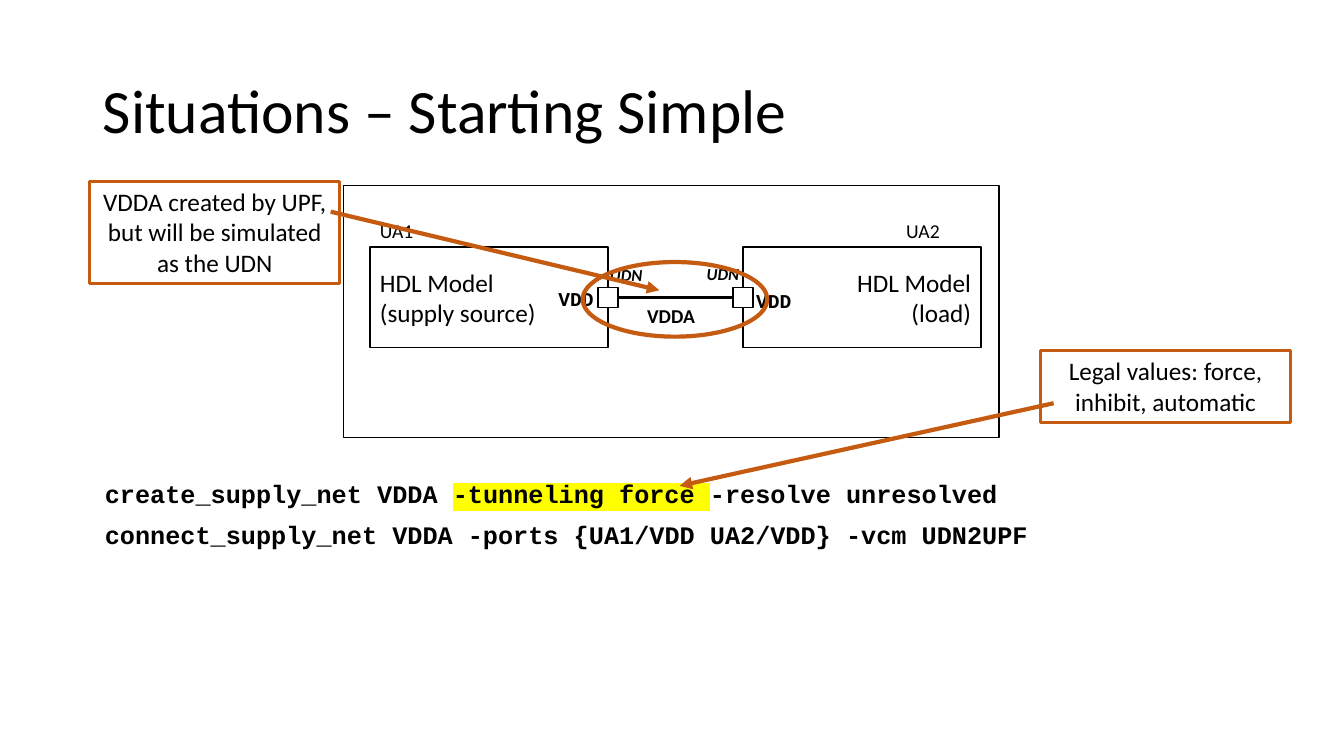
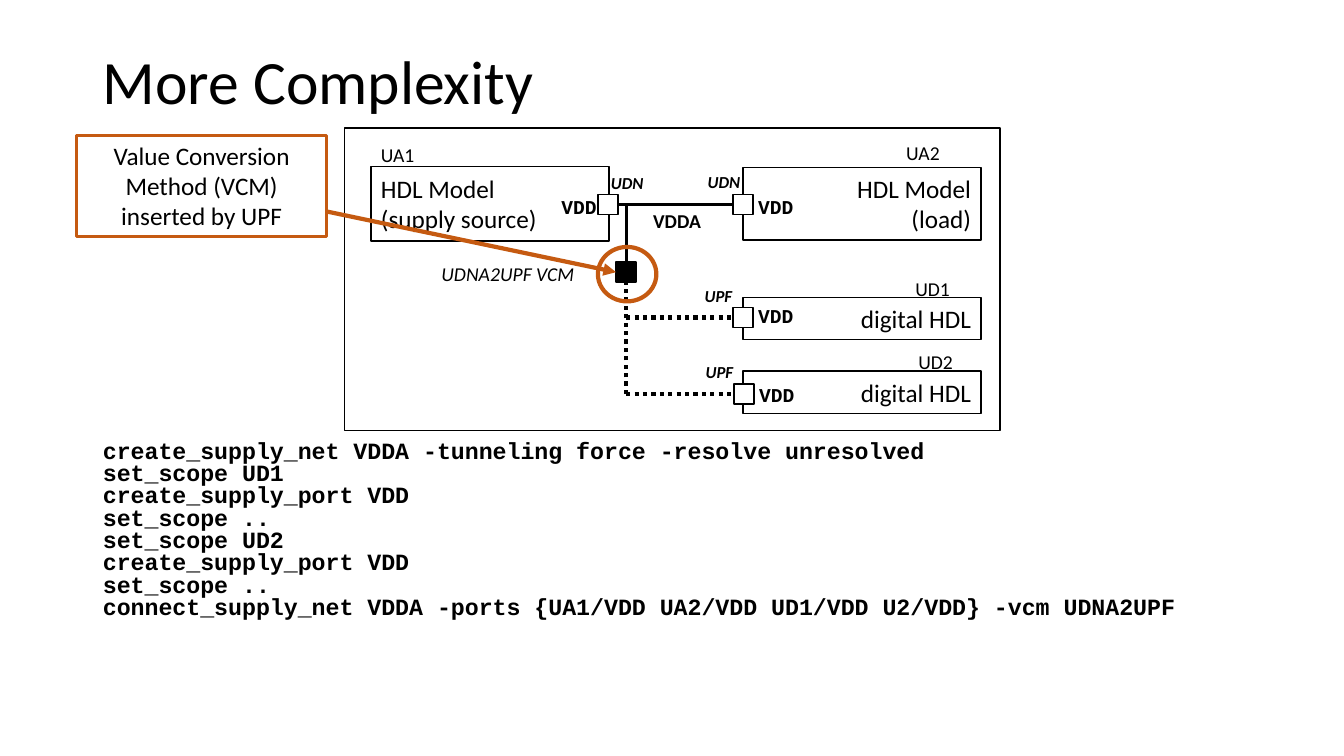
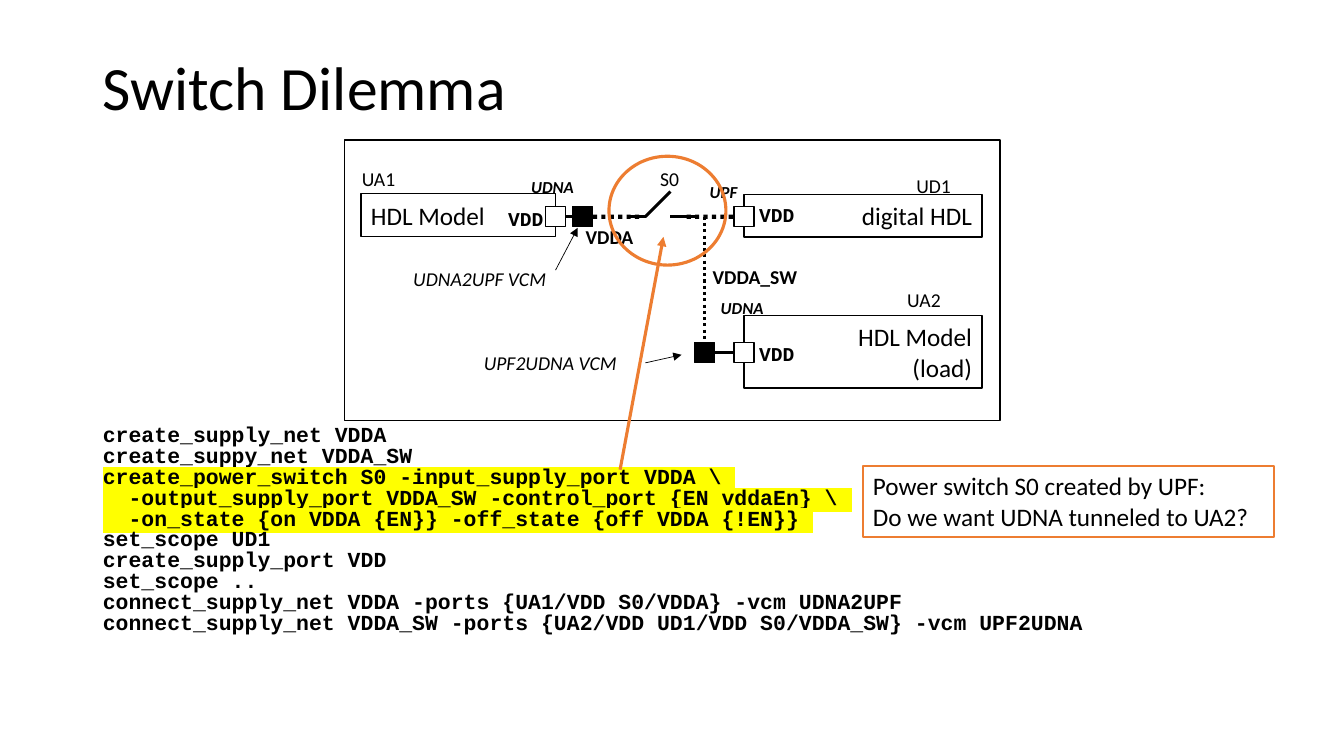
from lxml.etree import SubElement as Sub
from pptx import Presentation
from pptx.dml.color import RGBColor
from pptx.enum.dml import MSO_LINE_DASH_STYLE as Dash
from pptx.enum.shapes import MSO_CONNECTOR as Link, MSO_SHAPE as Kind
from pptx.enum.text import MSO_ANCHOR as Anchor, MSO_AUTO_SIZE as Fit, PP_ALIGN as Align
from pptx.oxml.ns import qn
from pptx.util import Inches, Pt

BLACK, WHITE, RUST, AMBER, MARK = "000000", "FFFFFF", "C55A11", "ED7D31", "FFFF00"
SANS, MONO = "Calibri", "Courier New"
TOP, LEFT, BASE, RIGHT = range(4)
TAGS = {
    "type": (0.79, 0.3, dict(size=12, bold=True, ital=True)),
    "name": (0.84, 0.34, dict(size=14)),
    "net": (1.23, 0.34, dict(size=14, bold=True)),
    "pin": (0.59, 0.34, dict(size=14, bold=True, face=MONO)),
    "vcm": (1.93, 0.34, dict(size=14, ital=True)),
}


def ink(code):
    """Turn a hex string into a colour."""
    return RGBColor.from_string(code)


def place(shape, *area):
    """Move and size a shape, in inches."""
    shape.left, shape.top, shape.width, shape.height = map(Inches, area)


def style(para, size, bold=False, ital=False, face=SANS, align=Align.LEFT):
    """Format a whole paragraph."""
    para.alignment = align
    font = para.font
    font.size, font.bold, font.italic, font.name = Pt(size), bold, ital, face
    font.color.rgb = ink(BLACK)


def write(frame, text, **look):
    """Fill a text frame with evenly styled paragraphs."""
    frame.word_wrap = True
    frame.text = text
    for para in frame.paragraphs:
        style(para, **look)


class Deck:
    """Hold the shared style and the current slide."""

    def __init__(self):
        """Start an empty wide deck."""
        self.deck = Presentation()
        self.deck.slide_width, self.deck.slide_height = Inches(13.33), Inches(7.5)

    def page(self, title, height):
        """Add a slide with its title."""
        self.slide = self.deck.slides.add_slide(self.deck.slide_layouts[1])
        self.shapes = self.slide.shapes
        head = self.shapes.title
        place(head, 0.92, 0.4, 11.5, height)
        frame = head.text_frame
        write(frame, title, size=44)
        frame.auto_size, frame.vertical_anchor = Fit.NONE, Anchor.MIDDLE
        frame.paragraphs[0].line_spacing = 0.9

    def code(self, area, lines, size, pitch, gap=0):
        """Fill the body with code; odd parts of a tuple are highlighted."""
        body = self.slide.placeholders[1]
        place(body, *area)
        frame = body.text_frame
        frame.auto_size, frame.vertical_anchor = Fit.NONE, Anchor.TOP
        for row, line in enumerate(lines):
            para = frame.add_paragraph() if row else frame.paragraphs[0]
            props = para._p.get_or_add_pPr()
            props.set("marL", "0")
            props.set("indent", "0")
            Sub(props, qn("a:buNone"))
            para.line_spacing = pitch
            para.space_before = Pt(gap if row else 0)
            style(para, size, bold=True, face=MONO)
            for spot, part in enumerate((line,) if isinstance(line, str) else line):
                if part:
                    run = para.add_run()
                    run.text = part
                    if spot % 2:
                        glow = Sub(run._r.get_or_add_rPr(), qn("a:highlight"))
                        Sub(glow, qn("a:srgbClr"), val=MARK)

    def shape(self, area, kind=Kind.RECTANGLE, fill=None, line=BLACK, width=1):
        """Draw an outlined preset shape."""
        shape = self.shapes.add_shape(kind, *map(Inches, area))
        shape.shadow.inherit = False
        if fill:
            shape.fill.solid()
            shape.fill.fore_color.rgb = ink(fill)
        else:
            shape.fill.background()
        shape.line.color.rgb, shape.line.width = ink(line), Pt(width)
        return shape

    def block(self, area, text, align=Align.RIGHT):
        """Draw a model block."""
        frame = self.shape(area).text_frame
        write(frame, text, size=18, align=align)
        frame.vertical_anchor = Anchor.MIDDLE

    def ring(self, area, line=RUST, width=3):
        """Circle a detail."""
        self.shape(area, Kind.OVAL, line=line, width=width)

    def note(self, area, text, line=RUST, width=2.25, align=Align.CENTER):
        """Draw a framed callout."""
        frame = self.shape(area, line=line, width=width).text_frame
        write(frame, text, size=18, align=align)
        frame.vertical_anchor, frame.auto_size = Anchor.TOP, Fit.SHAPE_TO_FIT_TEXT

    def tag(self, kind, *items):
        """Write small labels of one kind."""
        wide, high, look = TAGS[kind]
        for text, x, y in items:
            box = self.shapes.add_textbox(*map(Inches, (x, y, wide, high)))
            write(box.text_frame, text, **look)
            box.text_frame.auto_size = Fit.SHAPE_TO_FIT_TEXT

    def port(self, x, y, dx=0.15, dy=-0.06):
        """Draw a port and its pin label."""
        self.tag("pin", ("VDD", x + dx, y + dy))
        return self.shape((x, y, 0.2, 0.2), fill=WHITE)

    def cell(self, x, y):
        """Draw a black converter square."""
        return self.shape((x, y, 0.2, 0.2), fill=BLACK)

    def wire(self, start, end, width=2.25, line=BLACK, dots=False, tip=False):
        """Draw a line between points or (shape, side) pairs."""
        ends = [hasattr(spot[0], "shape_id") for spot in (start, end)]
        spots = [(0, 0) if tied else spot for spot, tied in zip((start, end), ends)]
        link = self.shapes.add_connector(Link.STRAIGHT, *(Inches(n) for spot in spots for n in spot))
        if ends[0]:
            link.begin_connect(*start)
        if ends[1]:
            link.end_connect(*end)
        link.line.color.rgb, link.line.width = ink(line), Pt(width)
        if dots:
            link.line.dash_style = Dash.ROUND_DOT
        if tip:
            Sub(link.line._get_or_add_ln(), qn("a:tailEnd"), type="triangle")
        Sub(link._element.spPr, qn("a:effectLst"))


def simple(deck):
    """Build the simple case."""
    deck.page("Situations – Starting Simple", 1.45)
    deck.code((0.94, 4.73, 11.5, 0.86), [
        ("create_supply_net VDDA ", "-tunneling force ", "-resolve unresolved"),
        "connect_supply_net VDDA -ports {UA1/VDD UA2/VDD} -vcm UDN2UPF",
    ], 18, 0.9, 10)
    deck.shape((3.41, 1.84, 6.5, 2.5))
    deck.block((3.67, 2.45, 2.36, 1), "HDL Model\n(supply source)", Align.LEFT)
    deck.block((7.37, 2.45, 2.36, 1), "HDL Model\n(load)")
    feed = deck.port(5.93, 2.85, -0.49, -0.05)
    load = deck.port(7.27, 2.85, 0.13, -0.03)
    deck.wire((feed, RIGHT), (load, LEFT))
    deck.tag("type", ("UDN", 5.95, 2.58), ("UDN", 6.91, 2.57))
    deck.tag("name", ("UA1", 3.67, 2.12), ("UA2", 8.89, 2.12))
    deck.tag("net", ("VDDA", 6.32, 2.97))
    deck.ring((5.78, 2.6, 1.83, 0.74))
    deck.wire((3.28, 2.1), (6.54, 2.88), 3, RUST, tip=True)
    deck.note((0.89, 1.8, 2.48, 1.01), "VDDA created by UPF, but will be simulated as the UDN")
    deck.note((10.32, 3.48, 2.48, 0.71), "Legal values: force, inhibit, automatic")
    deck.wire((10.45, 4), (6.74, 4.82), 3, RUST, tip=True)


def complex_net(deck):
    """Build the case with digital loads."""
    deck.page("More Complexity", 0.87)
    scopes = [line for unit in ("UD1", "UD2")
              for line in (f"set_scope {unit}", "create_supply_port VDD", "set_scope ..")]
    deck.code((0.92, 4.33, 11.5, 1.94), [
        "create_supply_net VDDA -tunneling force -resolve unresolved",
        *scopes,
        "connect_supply_net VDDA -ports {UA1/VDD UA2/VDD UD1/VDD U2/VDD} -vcm UDNA2UPF",
    ], 16.6, 0.8)
    deck.shape((3.42, 1.27, 6.5, 3))
    deck.block((3.68, 1.65, 2.36, 0.74), "HDL Model\n(supply source)", Align.LEFT)
    deck.block((7.37, 1.66, 2.36, 0.72), "HDL Model\n(load)")
    for y in (2.95, 3.68):
        deck.block((7.37, y, 2.36, 0.42), "digital HDL")
    feed = deck.port(5.93, 1.93, -0.46, -0.05)
    load = deck.port(7.27, 1.93, dy=-0.05)
    deck.wire((feed, RIGHT), (load, LEFT))
    cell = deck.cell(6.11, 2.6)
    deck.wire((6.21, 2.03), (cell, TOP))
    deck.wire((6.21, 3.91), (cell, BASE), 3, dots=True)
    for x, y, dy in ((7.27, 3.05, -0.08), (7.28, 3.81, -0.06)):
        deck.wire((6.21, y + 0.1), (deck.port(x, y, dy=dy), LEFT), 3, dots=True)
    deck.tag("type", ("UDN", 5.96, 1.66), ("UDN", 6.92, 1.65), ("UPF", 6.89, 2.79), ("UPF", 6.9, 3.54))
    deck.tag("name", ("UA1", 3.68, 1.37), ("UA2", 8.89, 1.35), ("UD1", 8.98, 2.7), ("UD2", 9.01, 3.42))
    deck.tag("net", ("VDDA", 6.38, 2.02))
    deck.tag("vcm", ("UDNA2UPF VCM", 4.28, 2.55))
    deck.ring((5.93, 2.45, 0.58, 0.54))
    deck.wire((3.25, 2.1), (cell, LEFT), 3, RUST, tip=True)
    deck.note((0.76, 1.34, 2.48, 1.01), "Value Conversion Method (VCM) inserted by UPF")


def switch(deck):
    """Build the power switch case."""
    deck.page("Switch Dilemma", 0.99)
    deck.code((0.92, 4.2, 11.5, 2.13), [
        "create_supply_net VDDA",
        "create_suppy_net VDDA_SW",
        ("", "create_power_switch S0 -input_supply_port VDDA \\ "),
        ("", "  -output_supply_port VDDA_SW -control_port {EN vddaEn} \\ "),
        ("", "  -on_state {on VDDA {EN}} -off_state {off VDDA {!EN}} "),
        "set_scope UD1",
        "create_supply_port VDD",
        "set_scope ..",
        "connect_supply_net VDDA -ports {UA1/VDD S0/VDDA} -vcm UDNA2UPF",
        "connect_supply_net VDDA_SW -ports {UA2/VDD UD1/VDD S0/VDDA_SW} -vcm UPF2UDNA",
    ], 15.3, 0.7, 2)
    deck.shape((3.42, 1.39, 6.5, 2.78))
    deck.block((3.58, 1.92, 1.93, 0.43), "HDL Model", Align.LEFT)
    deck.block((7.38, 1.93, 2.36, 0.42), "digital HDL")
    deck.block((7.38, 3.13, 2.36, 0.72), "HDL Model\n(load)")
    feed = deck.port(5.41, 2.05, -0.47, -0.05)
    gate = deck.port(7.28, 2.05, dy=-0.09)
    load = deck.port(7.28, 3.4)
    first, last = deck.cell(5.68, 2.05), deck.cell(6.89, 3.4)
    deck.wire((feed, RIGHT), (first, LEFT))
    deck.wire((first, RIGHT), (6.37, 2.15), 3, dots=True)
    deck.wire((6.81, 2.15), (gate, LEFT), 3, dots=True)
    deck.wire((6.99, 2.15), (last, TOP), dots=True)
    deck.wire((last, RIGHT), (load, LEFT))
    for start, end in (((6.22, 2.15), (6.41, 2.15)), ((6.4, 2.15), (6.65, 1.9)), ((6.65, 2.15), (6.89, 2.15))):
        deck.wire(start, end)
    for start, end in (((5.51, 2.68), (5.73, 2.26)), ((6.4, 3.6), (6.76, 3.52))):
        deck.wire(start, end, 0.5, tip=True)
    deck.tag("type", ("UDNA", 5.17, 1.7), ("UDNA", 7.05, 2.9), ("UPF", 6.94, 1.75))
    deck.tag("name", ("UA1", 3.49, 1.61), ("UA2", 8.9, 2.81), ("UD1", 8.99, 1.68), ("S0", 6.45, 1.61))
    deck.tag("net", ("VDDA", 5.71, 2.18), ("VDDA_SW", 6.97, 2.58))
    deck.tag("vcm", ("UDNA2UPF VCM", 4, 2.6), ("UPF2UDNA VCM", 4.7, 3.43))
    deck.ring((6.04, 1.55, 1.16, 1.08), AMBER, 2.25)
    deck.wire((6.15, 4.66), (6.58, 2.35), 2.25, AMBER, tip=True)
    deck.note((8.56, 4.62, 4.08, 0.71), "Power switch S0 created by UPF:\nDo we want UDNA tunneled to UA2?",
              AMBER, 1.5, Align.LEFT)


def main():
    """Build and save the deck."""
    deck = Deck()
    for build in (simple, complex_net, switch):
        build(deck)
    deck.deck.save("out.pptx")


if __name__ == "__main__":
    main()
